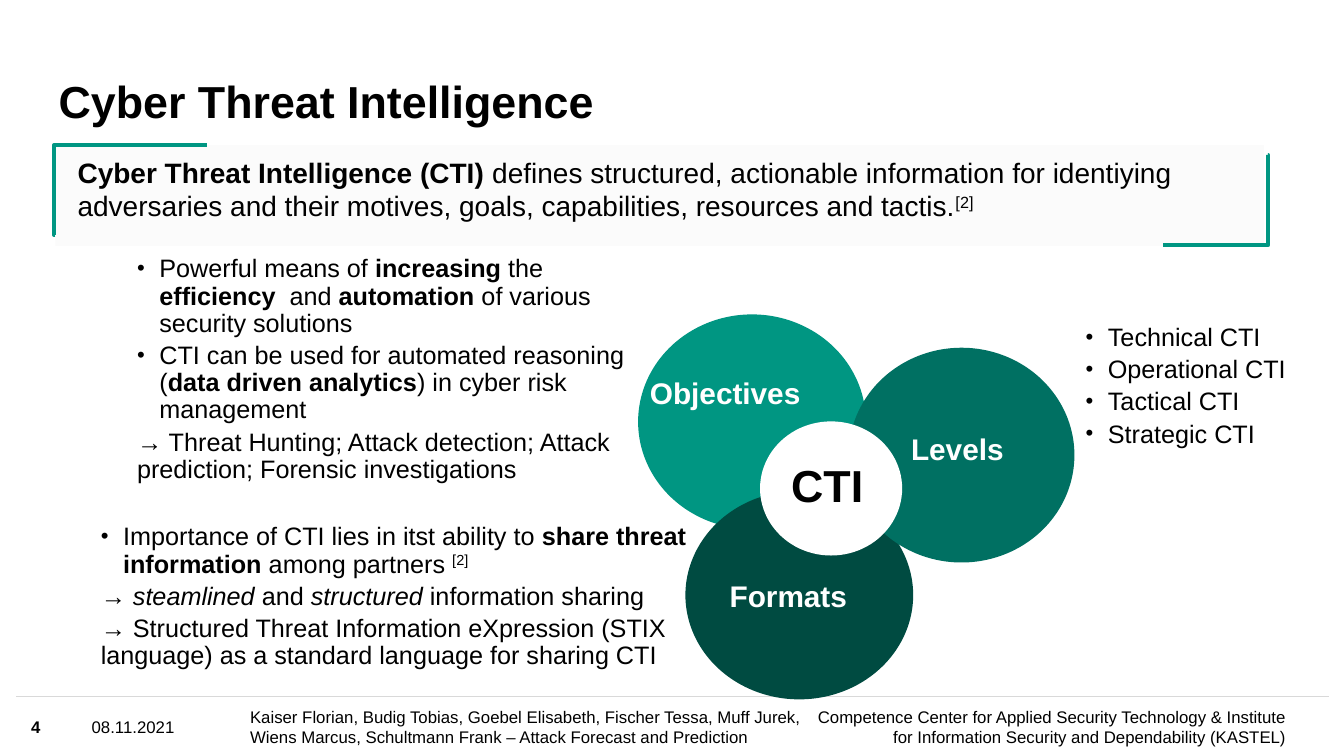
from lxml.etree import SubElement
from pptx import Presentation
from pptx.dml.color import RGBColor
from pptx.enum.shapes import MSO_CONNECTOR, MSO_SHAPE
from pptx.enum.text import MSO_ANCHOR, PP_ALIGN
from pptx.oxml.ns import qn
from pptx.util import Pt

BLACK = RGBColor(0x00, 0x00, 0x00)
WHITE = RGBColor(0xFF, 0xFF, 0xFF)
PALE = RGBColor(0xF2, 0xF2, 0xF2)
GREY = RGBColor(0xD9, 0xD9, 0xD9)
GREEN = RGBColor(0x00, 0x96, 0x82)
TEAL = RGBColor(0x00, 0x70, 0x62)
DARK = RGBColor(0x00, 0x4B, 0x41)

BOLD = {"bold": True}
ITALIC = {"italic": True}
SUPER = {"super": True}
LIST = {"line_spacing": 0.9, "space_before": Pt(3.6)}
FOOT = {"size": 12, "anchor": MSO_ANCHOR.MIDDLE}


def apply(target, values):
    """Set every attribute named in a dict."""
    for name, value in values.items():
        setattr(target, name, value)


def add_bullet(para):
    """Give a paragraph a round bullet and a hanging indent."""
    props = para._p.get_or_add_pPr()
    props.set("marL", str(Pt(16)))
    props.set("indent", str(-Pt(16)))
    SubElement(props, qn("a:buSzPct"), val="88000")
    SubElement(props, qn("a:buFont"), typeface="Arial")
    SubElement(props, qn("a:buChar"), char="•")


def add_run(para, text, size, color, style):
    """Add one run of styled text."""
    run = para.add_run()
    run.text = text
    values = {"name": "Arial", "size": Pt(size), "bold": False} | style
    if values.pop("super", False):
        run._r.get_or_add_rPr().set("baseline", "30000")
    apply(run.font, values)
    run.font.color.rgb = color


def add_text(slide, box, paras, size, color=BLACK, anchor=MSO_ANCHOR.TOP,
             inset=(0, 0), form=None):
    """Add a text box from paragraphs of (bullet, runs)."""
    frame = slide.shapes.add_textbox(*map(Pt, box)).text_frame
    side, edge = map(Pt, inset)
    apply(frame, {"word_wrap": True, "vertical_anchor": anchor,
                  "margin_left": side, "margin_right": side,
                  "margin_top": edge, "margin_bottom": edge})
    for index, (bullet, runs) in enumerate(paras):
        para = frame.add_paragraph() if index else frame.paragraphs[0]
        if bullet:
            add_bullet(para)
        apply(para, form or {})
        if not index:
            para.space_before = Pt(0)
        for text, style in runs:
            add_run(para, text, size, color, style)


def add_line(slide, ends, color, width, bend=None):
    """Add a straight line, or an elbow when a bend is given."""
    kind = MSO_CONNECTOR.STRAIGHT if bend is None else MSO_CONNECTOR.ELBOW
    line = slide.shapes.add_connector(kind, *map(Pt, ends))
    line.line.color.rgb = color
    line.line.width = Pt(width)
    props = line._element.spPr
    SubElement(props, qn("a:effectLst"))
    if bend is not None:
        guides = props.find(qn("a:prstGeom")).get_or_add_avLst()
        SubElement(guides, qn("a:gd"), name="adj1", fmla=f"val {bend}")


def add_fill(slide, kind, box, color, alpha=None):
    """Add a plain filled shape."""
    shape = slide.shapes.add_shape(kind, *map(Pt, box))
    shape.shadow.inherit = False
    shape.fill.solid()
    shape.fill.fore_color.rgb = color
    shape.line.fill.background()
    if alpha:
        tint = shape._element.spPr.find(".//" + qn("a:srgbClr"))
        SubElement(tint, qn("a:alpha"), val=str(alpha * 1000))


def add_footer(slide):
    """Add the rule and the four footer texts."""
    add_line(slide, (11.5, 497.5, 949, 497.5), GREY, 1)
    parts = [
        (22.3, 34.6, "4", BOLD, PP_ALIGN.LEFT),
        (65.5, 108, "08.11.2021", {}, PP_ALIGN.LEFT),
        (178.6, 399.6, "Kaiser Florian, Budig Tobias, Goebel Elisabeth, "
         "Fischer Tessa, Muff Jurek, Wiens Marcus, Schultmann Frank "
         "– Attack Forecast and Prediction", {}, PP_ALIGN.LEFT),
        (578.2, 340.6, "Competence Center for Applied Security Technology & "
         "Institute for Information Security and Dependability (KASTEL)",
         {}, PP_ALIGN.RIGHT),
    ]
    for left, width, text, style, align in parts:
        add_text(slide, (left, 498.2, width, 41.8), [(False, [(text, style)])],
                 **FOOT, form={"alignment": align})


def add_head(slide):
    """Add the title and the framed definition."""
    add_text(slide, (41.8, 31, 721.4, 60.5),
             [(False, [("Cyber Threat Intelligence", BOLD)])], 32,
             anchor=MSO_ANCHOR.BOTTOM, form={"line_spacing": 0.9})
    add_fill(slide, MSO_SHAPE.RECTANGLE, (39.6, 103.7, 863.3, 72), PALE, 26)
    add_text(slide, (55.4, 110.9, 841.7, 51.1), [(False, [
        ("Cyber Threat Intelligence (CTI) ", BOLD),
        ("defines structured, actionable information for identiying "
         "adversaries and their motives, goals, capabilities, resources "
         "and tactis.", {}),
        ("[2]", SUPER)])], 20)
    add_line(slide, (39.6, 167.8, 148, 103.7), GREEN, 3, -900)
    add_line(slide, (830.9, 175, 905.8, 110.9), GREEN, 3, 100200)


def add_lists(slide):
    """Add the three lists around the circles."""
    goals = [
        (True, [("Powerful means of ", {}), ("increasing ", BOLD),
                ("the ", {}), ("efficiency  ", BOLD), ("and ", {}),
                ("automation ", BOLD), ("of various security solutions", {})]),
        (True, [("CTI can be used for automated reasoning (", {}),
                ("data driven analytics", BOLD),
                (") in cyber risk management", {})]),
        (False, [("→ Threat Hunting; Attack detection; Attack prediction; "
                  "Forensic investigations", {})]),
    ]
    sharing = [
        (True, [("Importance of CTI lies in itst ability to ", {}),
                ("share threat information ", BOLD),
                ("among partners ", {}), ("[2]", SUPER)]),
        (False, [("→ ", {}), ("steamlined", ITALIC), (" and ", {}),
                 ("structured ", ITALIC), ("information sharing", {})]),
        (False, [("→ Structured Threat Information eXpression (STIX language) "
                  "as a standard language for sharing CTI", {})]),
    ]
    levels = [(True, [(f"{name} CTI", {})]) for name in
              ("Technical", "Operational", "Tactical", "Strategic")]
    add_text(slide, (72, 374.4, 424.8, 161.3), sharing, 18, form=LIST)
    add_text(slide, (775.4, 231.8, 174.2, 105.1), levels, 18, form=LIST)
    add_text(slide, (97.9, 182.9, 369.4, 161.3), goals, 18, form=LIST)


def add_rings(slide):
    """Add the overlapping circles and their labels."""
    rings = [
        ((455.8, 224.6, 162.7, 153.4), GREEN),
        ((489.6, 350.6, 162.7, 149), DARK),
        ((606.2, 248.4, 161.3, 153.4), TEAL),
        ((542.9, 301, 101.5, 95.8), WHITE),
    ]
    labels = [
        ("CTI", (558, 323.3, 77, 46.1), 32, BLACK),
        ("Levels", (643.7, 303.8, 181.4, 33.1), 21.3, WHITE),
        ("Formats", (514.1, 409, 104.4, 33.1), 21.3, WHITE),
        ("Objectives", (457.2, 264.2, 141.1, 33.1), 21.3, WHITE),
    ]
    for box, color in rings:
        add_fill(slide, MSO_SHAPE.FLOWCHART_CONNECTOR, box, color)
    for text, box, size, color in labels:
        add_text(slide, box, [(False, [(text, BOLD)])], size, color,
                 inset=(7.2, 3.6))


def main():
    """Build and save the slide."""
    deck = Presentation()
    apply(deck, {"slide_width": Pt(960), "slide_height": Pt(540)})
    slide = deck.slides.add_slide(deck.slide_layouts[6])
    add_footer(slide)
    add_head(slide)
    add_rings(slide)
    add_lists(slide)
    deck.save("out.pptx")


if __name__ == "__main__":
    main()
